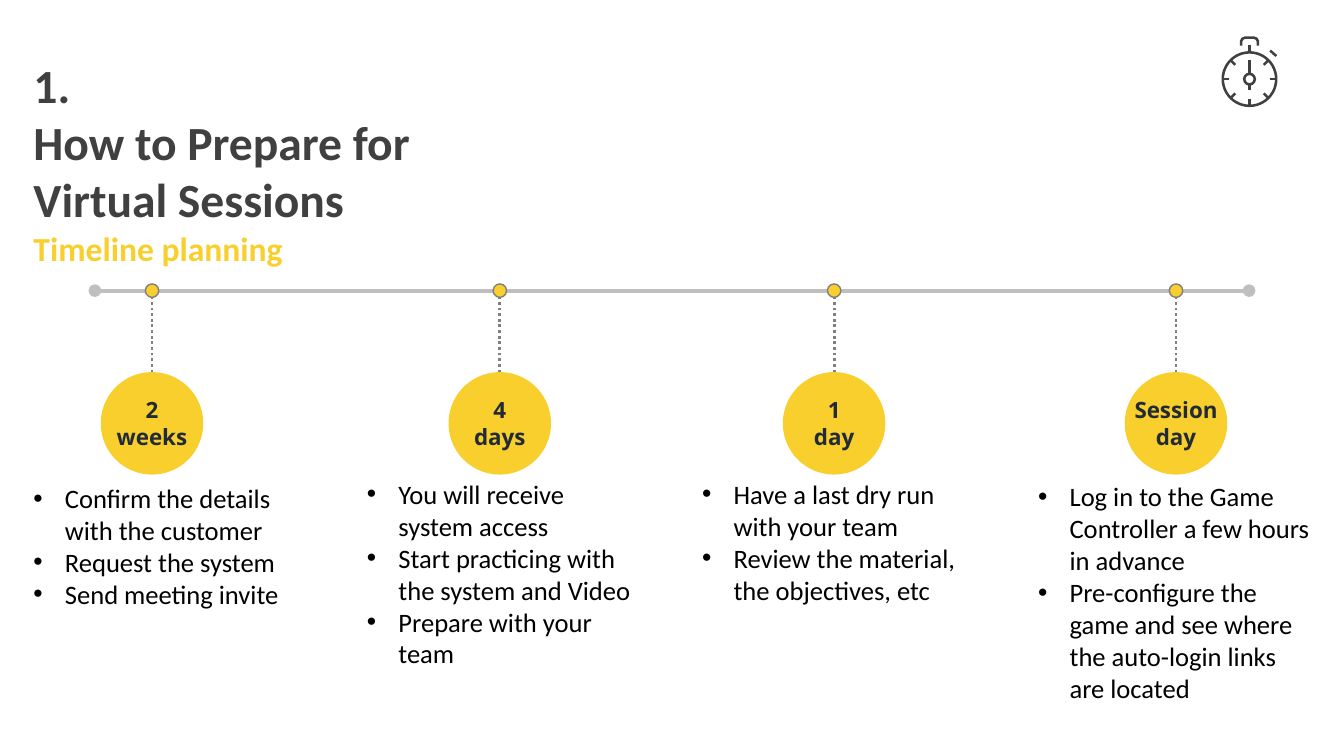
from dataclasses import dataclass
from math import cos, pi, sin

from lxml.etree import SubElement
from pptx import Presentation
from pptx.dml.color import RGBColor
from pptx.enum.dml import MSO_LINE as Dash
from pptx.enum.shapes import MSO_CONNECTOR as Conn, MSO_SHAPE as Preset
from pptx.enum.text import MSO_ANCHOR as Anchor, PP_ALIGN as Align
from pptx.oxml.ns import qn
from pptx.util import Emu, Inches, Pt

COLUMNS, ROWS = 160, 90
YELLOW, CHARCOAL, GREY, SILVER = "F8CF2C", "404040", "808080", "BFBFBF"
AXIS_ROW = 34.6
BADGE_TOP, BADGE_SIZE, DOT_SIZE = 44.3, 12.2, 1.6
ICON_WIDTH = 1.8


@dataclass
class Milestone:
    center: float
    when: str
    when_width: float
    tasks_left: float
    tasks_top: float
    tasks_width: float
    tasks_height: float
    tasks: tuple[str, ...]


MILESTONES = [
    Milestone(18.1, "2 weeks", 12.2, 2.8, 56.8, 32.4, 16.6, (
        "Confirm the details with the customer",
        "Request the system",
        "Send meeting invite")),
    Milestone(59.5, "4 days", 9.6, 42.5, 56.3, 35.2, 24.2, (
        "You will receive system access",
        "Start practicing with the system and Video",
        "Prepare with your team")),
    Milestone(99.3, "1\nday", 9.6, 82.4, 56.3, 35.2, 20.4, (
        "Have a last dry run with your team",
        "Review the material, the objectives, etc")),
    Milestone(140, "Session day", 14, 122.4, 56.6, 35.2, 31.9, (
        "Log in to the Game Controller a few hours in advance",
        "Pre-configure the game and see where the auto-login links are located")),
]

deck = Presentation()
deck.slide_width, deck.slide_height = Inches(13.33), Inches(7.5)
slide = deck.slides.add_slide(deck.slide_layouts[6])


def col(n: float) -> Emu:
    return Emu(round(deck.slide_width * n / COLUMNS))


def row(n: float) -> Emu:
    return Emu(round(deck.slide_height * n / ROWS))


def color(value: str) -> RGBColor:
    return RGBColor.from_string(value)


def line(x1: float, y1: float, x2: float, y2: float, ink: str, width: float):
    connector = slide.shapes.add_connector(
        Conn.STRAIGHT, col(x1), row(y1), col(x2), row(y2))
    connector.line.color.rgb = color(ink)
    connector.line.width = Pt(width)
    SubElement(connector._element.spPr, qn("a:effectLst"))
    return connector


def disc(x: float, y: float, size: float, fill: str = "", ink: str = "",
         width: float = 1) -> None:
    circle = slide.shapes.add_shape(
        Preset.OVAL, col(x - size / 2), row(y - size / 2), col(size), row(size))
    circle.shadow.inherit = False
    if fill:
        circle.fill.solid()
        circle.fill.fore_color.rgb = color(fill)
    else:
        circle.fill.background()
    if ink:
        circle.line.color.rgb = color(ink)
        circle.line.width = Pt(width)
    else:
        circle.line.fill.background()


def text(left: float, top: float, width: float, height: float, content: str):
    box = slide.shapes.add_textbox(col(left), row(top), col(width), row(height))
    box.text_frame.word_wrap = True
    box.text_frame.text = content
    return box.text_frame


def style(paragraph, size: float, ink: str, face: str = "Calibri",
          bold: bool = False) -> None:
    for run in paragraph.runs:
        run.font.size, run.font.name, run.font.bold = Pt(size), face, bold
        run.font.color.rgb = color(ink)


def bullet(paragraph) -> None:
    indent = col(3.75)
    props = paragraph._p.get_or_add_pPr()
    props.set("marL", str(indent))
    props.set("indent", str(-indent))
    SubElement(props, qn("a:buFont")).set("typeface", "Arial")
    SubElement(props, qn("a:buChar")).set("char", "•")


def draw_axis() -> None:
    axis = line(11.3, AXIS_ROW, 148.7, AXIS_ROW, SILVER, 3)
    outline = axis.line._get_or_add_ln()
    for end in ("a:headEnd", "a:tailEnd"):
        SubElement(outline, qn(end)).set("type", "oval")


def draw_milestone(stop: Milestone) -> None:
    badge_center = BADGE_TOP + BADGE_SIZE / 2
    stem = line(stop.center, BADGE_TOP + 0.7, stop.center, AXIS_ROW, GREY, 2)
    stem.line.dash_style = Dash.ROUND_DOT
    disc(stop.center, badge_center, BADGE_SIZE, YELLOW)
    disc(stop.center, AXIS_ROW, DOT_SIZE, YELLOW, GREY)

    when = text(stop.center - stop.when_width / 2, badge_center - 2.8,
                stop.when_width, 5.6, stop.when)
    when.vertical_anchor = Anchor.MIDDLE
    for paragraph in when.paragraphs:
        paragraph.alignment = Align.CENTER
        style(paragraph, 16, "222A35", "Open Sans", True)

    tasks = text(stop.tasks_left, stop.tasks_top, stop.tasks_width,
                 stop.tasks_height, "\n".join(stop.tasks))
    for paragraph in tasks.paragraphs:
        bullet(paragraph)
        style(paragraph, 19, "000000")


def draw_title() -> None:
    title = text(2.8, 6.1, 50.6, 30.2,
                 "1.\nHow to Prepare for Virtual Sessions\nTimeline planning")
    number, heading, subtitle = title.paragraphs
    style(number, 34, CHARCOAL, bold=True)
    style(heading, 34, CHARCOAL, bold=True)
    style(subtitle, 24, YELLOW, bold=True)


def draw_stopwatch(x: float, y: float) -> None:
    radius = 3.18
    disc(x, y, 2 * radius, ink=CHARCOAL, width=ICON_WIDTH)
    disc(x, y, 1.26, ink=CHARCOAL, width=ICON_WIDTH)
    for step in range(1, 8):
        dx, dy = sin(step * pi / 4), -cos(step * pi / 4)
        line(x + 2.4 * dx, y + 2.4 * dy, x + radius * dx, y + radius * dy,
             CHARCOAL, ICON_WIDTH)
    for start, end in ((-4.1, -radius), (-2.3, -0.7), (0.7, 1.25)):
        line(x, y + start, x, y + end, CHARCOAL, ICON_WIDTH)
    line(x + 2.45, y - 3.4, x + 3.2, y - 2.75, CHARCOAL, ICON_WIDTH)

    crown = [(-1, -4), (-1, -4.5), (-0.85, -4.8), (-0.5, -4.95),
             (0.5, -4.95), (0.85, -4.8), (1, -4.5), (1, -4)]
    points = [(col(x + dx), row(y + dy)) for dx, dy in crown]
    builder = slide.shapes.build_freeform(*points[0])
    builder.add_line_segments(points[1:], close=False)
    button = builder.convert_to_shape()
    button.shadow.inherit = False
    button.fill.background()
    button.line.color.rgb = color(CHARCOAL)
    button.line.width = Pt(ICON_WIDTH)


def main() -> None:
    draw_axis()
    for stop in MILESTONES:
        draw_milestone(stop)
    draw_title()
    draw_stopwatch(148.75, 9.42)
    deck.save("out.pptx")


if __name__ == "__main__":
    main()
